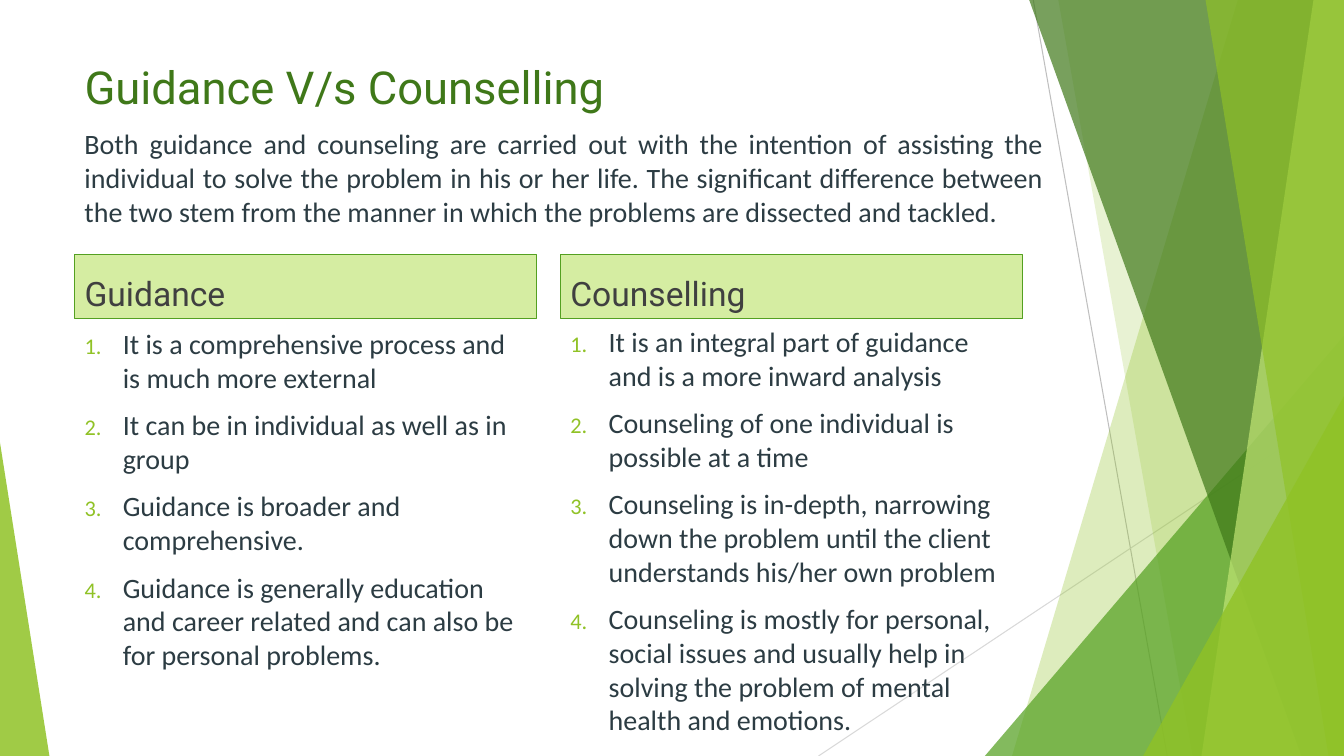
import pptx
import pptx.dml.color
import pptx.enum.shapes
import pptx.enum.text
import pptx.oxml
import pptx.oxml.ns
import pptx.util
from lxml import etree

SLIDE_WIDTH = pptx.util.Inches(13.333)
SLIDE_HEIGHT = pptx.util.Inches(7.5)
COLORS = {
    "lime": "90C226", "green": "54A021", "forest": "3F7819", "pale": "C0E474",
    "band": "D5EDA2", "heading": "404040", "body": "2C3C43",
    "silver": "BFBFBF", "mist": "D9D9D9",
}
# Positions are percentages of the slide's width and height.
MARGIN, COLUMN, PITCH = 5.55, 34.35, 36.15
ALIGN = pptx.enum.text.PP_ALIGN
ANCHOR = pptx.enum.text.MSO_ANCHOR
SHAPE = pptx.enum.shapes.MSO_SHAPE

INTRO = (
    "Both guidance and counseling are carried out with the intention of "
    "assisting the individual to solve the problem in his or her life. "
    "The significant difference between the two stem from the manner in "
    "which the problems are dissected and tackled."
)
# Heading, top and height of the list, and its points
COMPARISON = [
    ("Guidance", 42.53, 48.13, [
        "It is a comprehensive process and is much more external",
        "It can be in individual as well as in group",
        "Guidance is broader and comprehensive.",
        "Guidance is generally education and career related and can also be "
        "for personal problems.",
    ]),
    ("Counselling", 42.27, 53.2, [
        "It is an integral part of guidance and is a more inward analysis",
        "Counseling of one individual is possible at a time",
        "Counseling is in-depth, narrowing down the problem until the client "
        "understands his/her own problem",
        "Counseling is mostly for personal, social issues and usually help in "
        "solving the problem of mental health and emotions.",
    ]),
]


def across(share):
    return round(SLIDE_WIDTH * share / 100)


def down(share):
    return round(SLIDE_HEIGHT * share / 100)


def box(left, top, width, height):
    return across(left), down(top), across(width), down(height)


def rgb(color):
    return pptx.dml.color.RGBColor.from_string(COLORS[color])


def paint(shape, color, opacity=100, outline=None):
    shape.shadow.inherit = False
    shape.fill.solid()
    shape.fill.fore_color.rgb = rgb(color)
    if opacity < 100:
        tint = shape.fill._xPr.find(".//" + pptx.oxml.ns.qn("a:srgbClr"))
        alpha = etree.SubElement(tint, pptx.oxml.ns.qn("a:alpha"))
        alpha.set("val", str(opacity * 1000))
    if outline:
        shape.line.color.rgb = rgb(outline)
        shape.line.width = pptx.util.Pt(0.75)
    else:
        shape.line.fill.background()


def add_ray(slide, start, end, color):
    ray = slide.shapes.add_connector(
        pptx.enum.shapes.MSO_CONNECTOR.STRAIGHT,
        across(start[0]), down(start[1]), across(end[0]), down(end[1]))
    ray.line.color.rgb = rgb(color)
    ray.line.width = pptx.util.Pt(0.75)
    etree.SubElement(ray._element.spPr, pptx.oxml.ns.qn("a:effectLst"))


def add_facet(slide, top_x, bottom_x, color, opacity):
    """Fill from a slanted edge to the slide's right side."""
    outline = slide.shapes.build_freeform(across(top_x), 0)
    outline.add_line_segments([
        (across(100), 0), (across(100), down(100)), (across(bottom_x), down(100))])
    paint(outline.convert_to_shape(), color, opacity)


def add_corner(slide, left, top, width, apex, color, opacity):
    """Stand a right triangle on the slide's bottom edge."""
    corner = slide.shapes.add_shape(
        SHAPE.ISOSCELES_TRIANGLE, *box(left, top, width, 100 - top))
    corner.adjustments[0] = apex
    paint(corner, color, opacity)


def number_paragraph(paragraph):
    properties = paragraph._p.get_or_add_pPr()
    indent = pptx.util.Inches(0.38)
    properties.set("marL", str(indent))
    properties.set("indent", str(-indent))
    namespace = pptx.oxml.ns.nsdecls("a")
    for markup in (
        f'<a:buClr {namespace}><a:srgbClr val="{COLORS["lime"]}"/></a:buClr>',
        f'<a:buSzPct {namespace} val="80000"/>',
        f'<a:buAutoNum {namespace} type="arabicPeriod"/>',
    ):
        properties.append(pptx.oxml.parse_xml(markup))


def write(holder, lines, *, size=20, font="Calibri", color="body", before=0,
          align=ALIGN.LEFT, anchor=ANCHOR.TOP, numbered=False):
    frame = holder.text_frame
    frame.word_wrap = True
    frame.vertical_anchor = anchor
    for index, line in enumerate(lines):
        paragraph = frame.add_paragraph() if index else frame.paragraphs[0]
        paragraph.alignment = align
        paragraph.space_before = pptx.util.Pt(before)
        run = paragraph.add_run()
        run.text = line
        run.font.size = pptx.util.Pt(size)
        run.font.name = font
        run.font.color.rgb = rgb(color)
        if numbered:
            number_paragraph(paragraph)


def add_backdrop(slide):
    add_ray(slide, (76.88, 0), (86.85, 100), "silver")
    add_ray(slide, (100, 53.73), (60.9, 100), "mist")
    add_facet(slide, 92.1, 75.3, "lime", 30)
    add_facet(slide, 78.75, 88.73, "lime", 20)
    add_corner(slide, 73.28, 44.4, 26.72, 1, "green", 72)
    add_facet(slide, 76.58, 96.83, "forest", 70)
    add_facet(slide, 97.73, 89.4, "pale", 70)
    add_facet(slide, 89.7, 98.85, "lime", 65)
    add_corner(slide, 85.05, 52.4, 14.95, 1, "lime", 80)
    add_corner(slide, 0, 58.53, 3.68, 0, "lime", 85)


def add_comparison(slide):
    for index, (heading, top, height, points) in enumerate(COMPARISON):
        left = MARGIN + index * PITCH
        band = slide.shapes.add_shape(
            SHAPE.RECTANGLE, *box(left, 33.73, COLUMN, 8.4))
        paint(band, "band", outline="green")
        write(band, [heading], size=24, font="Roboto", color="heading",
              before=10, anchor=ANCHOR.BOTTOM)
        differences = slide.shapes.add_textbox(*box(left, top, COLUMN, height))
        write(differences, points, before=10, numbered=True)


def main():
    deck = pptx.Presentation()
    deck.slide_width, deck.slide_height = SLIDE_WIDTH, SLIDE_HEIGHT
    slide = deck.slides.add_slide(deck.slide_layouts[6])
    add_backdrop(slide)
    title = slide.shapes.add_textbox(*box(MARGIN, 7.2, 70.5, 10.53))
    write(title, ["Guidance V/s Counselling"], size=32.4, font="Roboto",
          color="forest")
    add_comparison(slide)
    intro = slide.shapes.add_textbox(*box(MARGIN, 16.13, 72.83, 14.8))
    write(intro, [INTRO], align=ALIGN.JUSTIFY)
    deck.save("out.pptx")


if __name__ == "__main__":
    main()
